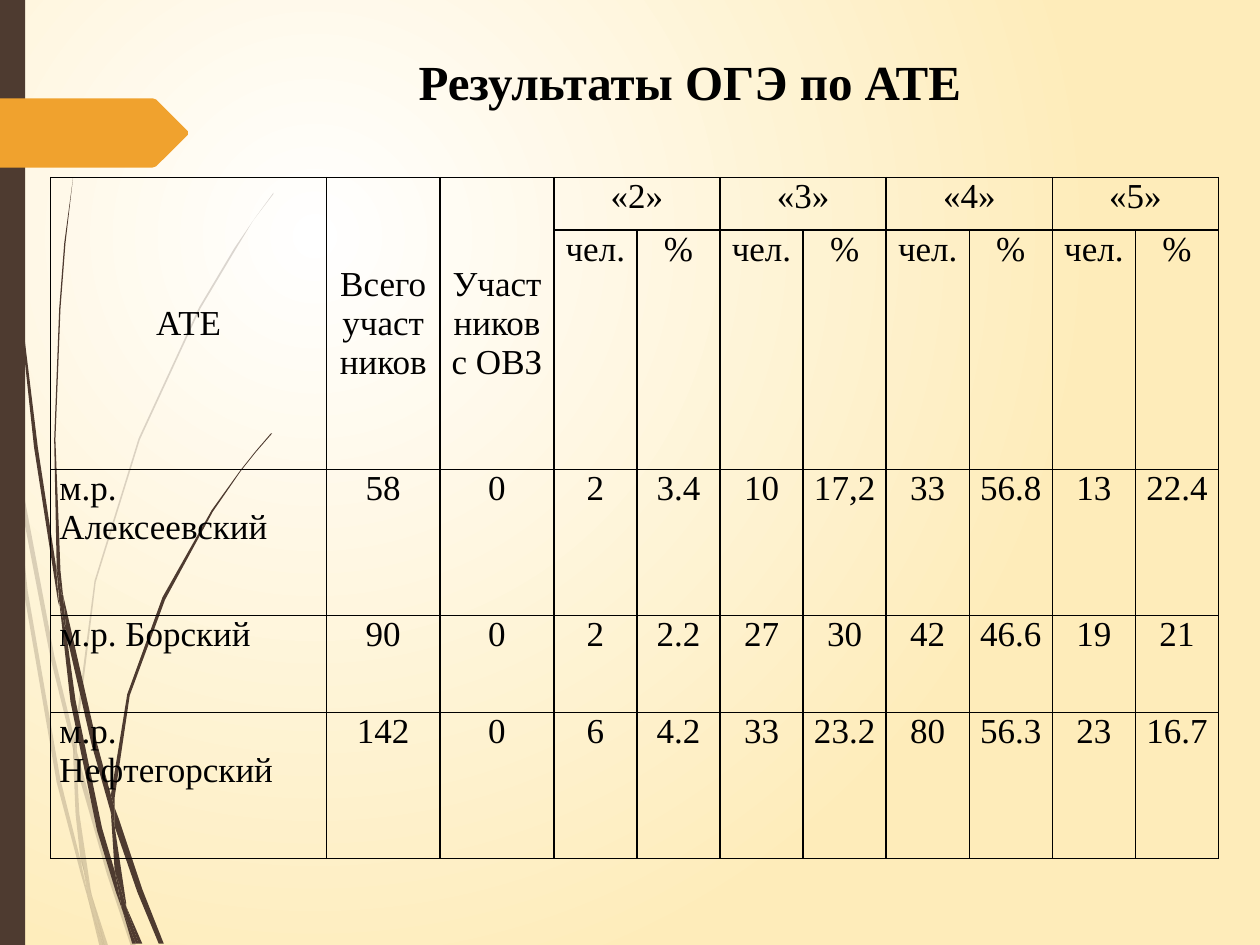
from lxml.etree import SubElement
from pptx import Presentation
from pptx.dml.color import RGBColor
from pptx.enum.shapes import MSO_SHAPE as Shape
from pptx.enum.text import MSO_ANCHOR as Anchor, MSO_AUTO_SIZE as AutoSize, PP_ALIGN as Align
from pptx.oxml.ns import qn
from pptx.util import Pt

BROWN, ORANGE, BLACK, WHITE, CREAM = "4E3B30", "F0A22E", "000000", "FFFFFF", "FEECBA"
HUNDREDTH_INCH = Pt(0.72)

PALE_STEMS = [
    [(8, 350), (6, 322), (0, 282), (0, 299), (7, 344)],
    [(40, 522), (59, 599), (59, 586), (43, 520), (10, 345), (12, 376)],
    [(64, 607), (61, 596), (61, 610), (85, 694), (104, 751), (108, 751), (88, 692)],
    [(83, 751), (86, 751), (73, 711)],
    [(64, 683), (48, 619), (22, 469), (12, 376), (8, 350), (19, 470), (45, 621),
     (64, 693), (70, 714), (69, 707)],
    [(58, 599), (60, 646), (64, 683), (67, 692), (73, 711), (72, 706), (63, 646),
     (61, 610), (61, 608)],
    [(61, 584), (76, 462), (111, 349), (159, 245), (187, 198), (201, 175), (217, 154),
     (217, 153), (201, 175), (186, 197), (158, 244), (110, 348), (75, 461), (59, 584),
     (59, 586), (61, 596)],
    [(70, 714), (79, 751), (82, 751)],
    [(61, 608), (61, 610), (61, 596), (59, 586), (58, 599)],
    [(67, 692), (65, 683), (69, 707), (70, 714), (82, 751), (83, 751), (73, 711)],
]
DARK_STEMS = [
    [(5, 110), (14, 233), (27, 355), (46, 477), (47, 481), (45, 457), (45, 453),
     (30, 355), (15, 232), (6, 109), (4, 48), (3, 0), (2, 0), (3, 48)],
    [(73, 592), (88, 645), (88, 633), (88, 631), (77, 590), (50, 472), (53, 505)],
    [(94, 649), (91, 641), (91, 656), (109, 708), (126, 749), (130, 749), (113, 706)],
    [(91, 691), (81, 657), (60, 556), (53, 505), (47, 477), (56, 557), (77, 659),
     (92, 708), (97, 722), (96, 717)],
    [(50, 472), (48, 453), (44, 349), (48, 245), (52, 193), (58, 141), (51, 193),
     (47, 245), (43, 349), (45, 449), (49, 472)],
    [(110, 749), (113, 749), (100, 719)],
    [(47, 477), (53, 505), (50, 472), (49, 472), (45, 449), (45, 453)],
    [(91, 633), (103, 552), (131, 476), (169, 406), (191, 374), (203, 359), (216, 344),
     (215, 344), (203, 358), (191, 373), (168, 405), (129, 474), (101, 551), (88, 631),
     (91, 641)],
    [(97, 722), (105, 749), (108, 749)],
    [(88, 645), (91, 691), (96, 706), (100, 719), (100, 716), (91, 656), (90, 651)],
    [(88, 645), (90, 651), (91, 656), (91, 641), (88, 631), (88, 633)],
    [(96, 706), (91, 691), (96, 717), (97, 722), (108, 749), (110, 749), (100, 719)],
]
POINTER = [(0, 78), (121, 78), (124, 79), (149, 104), (149, 107), (124, 132), (121, 133), (0, 133)]

GRADES = ["«2»", "«3»", "«4»", "«5»"]
DISTRICTS = [
    ["м.р. Алексеевский", "58", "0", "2", "3.4", "10", "17,2", "33", "56.8", "13", "22.4"],
    ["м.р. Борский", "90", "0", "2", "2.2", "27", "30", "42", "46.6", "19", "21"],
    ["м.р. Нефтегорский", "142", "0", "6", "4.2", "33", "23.2", "80", "56.3", "23", "16.7"],
]
COLUMN_WIDTHS = [157.5, 65, 65] + [47.5] * 8
ROW_HEIGHTS = [30, 136.8, 83.4, 55.5, 83.4]


def color(hex_string):
    return RGBColor.from_string(hex_string)


class SlideBuilder:
    font = "Times New Roman"

    def __init__(self, slide):
        self.slide = slide

    def background(self, center, edge):
        fill = self.slide.background.fill
        fill.gradient()
        for stop, tone in zip(fill.gradient_stops, (center, edge)):
            stop.color.rgb = color(tone)
        gradient = self.slide.element.find(".//" + qn("a:gradFill"))
        gradient.remove(gradient.find(qn("a:lin")))
        circle = SubElement(gradient, qn("a:path"), path="circle")
        SubElement(circle, qn("a:fillToRect"), l="50000", t="50000", r="100000", b="100000")

    def paint(self, shape, tone, opacity=100):
        shape.shadow.inherit = False
        shape.fill.solid()
        shape.fill.fore_color.rgb = color(tone)
        shape.line.fill.background()
        if opacity < 100:
            rgb = shape.element.spPr.find(".//" + qn("a:srgbClr"))
            SubElement(rgb, qn("a:alpha"), val=str(opacity * 1000))

    def outline(self, points, tone, opacity=100, shapes=None):
        shapes = self.slide.shapes if shapes is None else shapes
        builder = shapes.build_freeform(*points[0], scale=HUNDREDTH_INCH)
        builder.add_line_segments(points[1:], close=True)
        self.paint(builder.convert_to_shape(), tone, opacity)

    def bundle(self, outlines, tone, opacity=100):
        group = self.slide.shapes.add_group_shape()
        for points in outlines:
            self.outline(points, tone, opacity, group.shapes)

    def bar(self, left, top, width, height, tone):
        box = map(Pt, (left, top, width, height))
        self.paint(self.slide.shapes.add_shape(Shape.RECTANGLE, *box), tone)

    def add_text(self, paragraph, text, size, align, bold=False):
        paragraph.alignment = align
        run = paragraph.add_run()
        run.text = text
        run.font.name = self.font
        run.font.size = Pt(size)
        run.font.bold = bold
        run.font.color.rgb = color(BLACK)

    def title(self, text, left, top, width, height):
        heading = self.slide.shapes.title
        heading.left, heading.top, heading.width, heading.height = map(Pt, (left, top, width, height))
        frame = heading.text_frame
        frame.word_wrap = False
        frame.auto_size = AutoSize.SHAPE_TO_FIT_TEXT
        frame.vertical_anchor = Anchor.TOP
        self.add_text(frame.paragraphs[0], text, 28, Align.LEFT, bold=True)

    def border(self, cell):
        properties = cell._tc.get_or_add_tcPr()
        for side in ("a:lnL", "a:lnR", "a:lnT", "a:lnB"):
            line = SubElement(properties, qn(side), w=str(Pt(1)))
            SubElement(SubElement(line, qn("a:solidFill")), qn("a:srgbClr"), val=BLACK)

    def cell(self, cell, text, align=Align.CENTER, anchor=Anchor.TOP):
        cell.vertical_anchor = anchor
        self.add_text(cell.text_frame.paragraphs[0], text, 20, align)

    def table(self, left, top, widths, heights):
        box = map(Pt, (left, top, sum(widths), sum(heights)))
        table = self.slide.shapes.add_table(len(heights), len(widths), *box).table
        table.first_row = table.horz_banding = False
        for column, width in zip(table.columns, widths):
            column.width = Pt(width)
        for row, height in zip(table.rows, heights):
            row.height = Pt(height)
        for cell in table.iter_cells():
            cell.margin_left = cell.margin_right = Pt(5)
            cell.margin_top = cell.margin_bottom = Pt(0)
            self.border(cell)
            cell.fill.background()
        return table


def main():
    deck = Presentation()
    deck.slide_width, deck.slide_height = Pt(720), Pt(540)
    page = SlideBuilder(deck.slides.add_slide(deck.slide_layouts[5]))

    page.background(WHITE, CREAM)
    page.bundle(PALE_STEMS, BROWN, 20)
    page.bundle(DARK_STEMS, BROWN)
    page.bar(0, 0, 14.4, 540, BROWN)
    page.outline(POINTER, ORANGE)
    page.title("Результаты ОГЭ по АТЕ", 232, 26, 335, 41)

    results = page.table(29, 101.5, COLUMN_WIDTHS, ROW_HEIGHTS)
    for column, heading in enumerate(["АТЕ", "Всего участников", "Участников с ОВЗ"]):
        results.cell(0, column).merge(results.cell(1, column))
        page.cell(results.cell(0, column), heading, anchor=Anchor.MIDDLE)
    for column, grade in zip(range(3, 11, 2), GRADES):
        results.cell(0, column).merge(results.cell(0, column + 1))
        page.cell(results.cell(0, column), grade)
        page.cell(results.cell(1, column), "чел.")
        page.cell(results.cell(1, column + 1), "%")
    for row, district in enumerate(DISTRICTS, start=2):
        for column, value in enumerate(district):
            align = Align.CENTER if column else Align.JUSTIFY
            page.cell(results.cell(row, column), value, align)

    deck.save("out.pptx")


if __name__ == "__main__":
    main()
